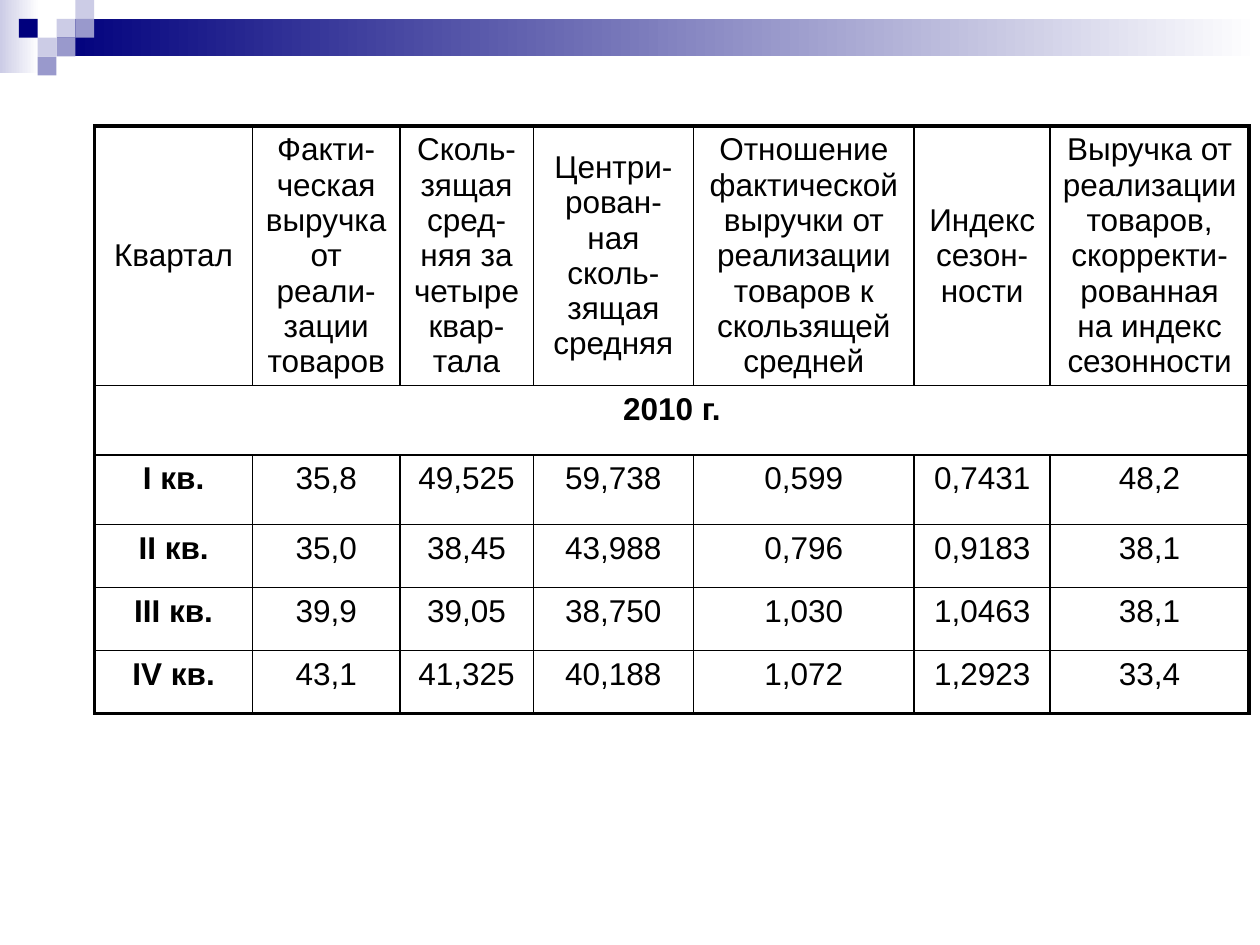
from dataclasses import dataclass

from lxml.etree import SubElement, fromstring
from pptx import Presentation
from pptx.dml.color import RGBColor as Rgb
from pptx.enum.shapes import MSO_SHAPE as Shape
from pptx.enum.text import MSO_ANCHOR as Anchor, PP_ALIGN as Align
from pptx.oxml.ns import nsdecls, qn
from pptx.util import Cm, Pt


@dataclass(frozen=True)
class Theme:
    navy: str = "00007D"
    lilac: str = "9999CC"
    pale: str = "CCCCE6"
    white: str = "FFFFFF"
    ink: str = "000000"
    font: str = "Arial"
    text_size: float = 18
    frame_width: float = 2.25
    rule_width: float = 1


@dataclass(frozen=True)
class Block:
    """A header rectangle in cm; fade_to turns the fill into a gradient."""
    left: float
    top: float
    width: float
    height: float
    color: str
    fade_to: str = ""


THEME = Theme()
SQUARE = 0.38

# Header decoration: two fading bars, then squares on a shared grid
BARS = [
    Block(0, 0, 0.79, 1.47, THEME.pale, THEME.white),
    Block(1.14, SQUARE, 24.26, 2 * SQUARE, THEME.navy, THEME.white),
]
SQUARES = [  # column, row, colour
    (3, 1, THEME.pale), (4, 0, THEME.pale), (4, 1, THEME.lilac),
    (2, 2, THEME.pale), (1, 1, THEME.navy), (3, 2, THEME.lilac),
    (2, 3, THEME.lilac),
]

# Table content
HEADINGS = [
    "Квартал",
    "Факти-ческая выручка от реали-зации товаров",
    "Сколь-зящая сред-няя за четыре квар-тала",
    "Центри-рован-ная сколь-зящая средняя",
    "Отношение фактической выручки от реализации товаров к скользящей средней",
    "Индекс сезон-ности",
    "Выручка от реализации товаров, скорректи-рованная на индекс сезонности",
]
YEAR = "2010 г."
QUARTERS = [
    ["I кв.", "35,8", "49,525", "59,738", "0,599", "0,7431", "48,2"],
    ["II кв.", "35,0", "38,45", "43,988", "0,796", "0,9183", "38,1"],
    ["III кв.", "39,9", "39,05", "38,750", "1,030", "1,0463", "38,1"],
    ["IV кв.", "43,1", "41,325", "40,188", "1,072", "1,2923", "33,4"],
]
COLUMN_WIDTHS = [3.18, 2.97, 2.69, 3.23, 4.45, 2.74, 4.01]
ROW_HEIGHTS = [5.23, 1.4, 1.4, 1.27, 1.27, 1.27]
TABLE_LEFT, TABLE_TOP = 1.91, 2.54
SIDE_MARGIN = 0.23


def draw_block(slide, block: Block) -> None:
    shape = slide.shapes.add_shape(
        Shape.RECTANGLE, Cm(block.left), Cm(block.top),
        Cm(block.width), Cm(block.height))
    shape.shadow.inherit = False
    shape.line.fill.background()
    if block.fade_to:
        shape.fill.gradient()
        shape.fill.gradient_angle = 0
        for stop, color in zip(shape.fill.gradient_stops,
                               (block.color, block.fade_to)):
            stop.color.rgb = Rgb.from_string(color)
    else:
        shape.fill.solid()
        shape.fill.fore_color.rgb = Rgb.from_string(block.color)


def set_borders(cell, left: bool, right: bool, top: bool, bottom: bool) -> None:
    """Draw all four edges; a true side lies on the outer frame."""
    properties = cell._tc.get_or_add_tcPr()
    sides = zip(("lnL", "lnR", "lnT", "lnB"), (left, right, top, bottom))
    for position, (tag, is_frame) in enumerate(sides):
        width = THEME.frame_width if is_frame else THEME.rule_width
        edge = fromstring(f'<a:{tag} {nsdecls("a")} w="{int(Pt(width))}"/>')
        fill = SubElement(edge, qn("a:solidFill"))
        SubElement(fill, qn("a:srgbClr"), val=THEME.ink)
        properties.insert(position, edge)


def write_cell(cell, text: str, bold: bool, anchor) -> None:
    cell.fill.background()
    cell.margin_left = cell.margin_right = Cm(SIDE_MARGIN)
    cell.vertical_anchor = anchor
    cell.text = text
    paragraph = cell.text_frame.paragraphs[0]
    paragraph.alignment = Align.CENTER
    paragraph.font.name = THEME.font
    paragraph.font.size = Pt(THEME.text_size)
    paragraph.font.bold = bold
    paragraph.font.color.rgb = Rgb.from_string(THEME.ink)


def draw_table(slide) -> None:
    rows = [HEADINGS, [YEAR], *QUARTERS]
    last_row, last_column = len(rows) - 1, len(HEADINGS) - 1
    table = slide.shapes.add_table(
        len(rows), len(HEADINGS), Cm(TABLE_LEFT), Cm(TABLE_TOP),
        Cm(sum(COLUMN_WIDTHS)), Cm(sum(ROW_HEIGHTS))).table
    table.first_row = table.horz_banding = False
    for column, width in zip(table.columns, COLUMN_WIDTHS):
        column.width = Cm(width)
    for row, height in zip(table.rows, ROW_HEIGHTS):
        row.height = Cm(height)

    # The year spans the full width
    table.cell(1, 0).merge(table.cell(1, last_column))
    for r, texts in enumerate(rows):
        for c, text in enumerate(texts):
            cell = table.cell(r, c)
            write_cell(cell, text, bold=r > 0 and c == 0,
                       anchor=Anchor.TOP if r else Anchor.MIDDLE)
            set_borders(cell, left=c == 0, right=c == last_column or r == 1,
                        top=r == 0, bottom=r == last_row)


def main() -> None:
    deck = Presentation()
    deck.slide_width, deck.slide_height = Cm(25.4), Cm(19.05)
    slide = deck.slides.add_slide(deck.slide_layouts[6])
    squares = [Block(column * SQUARE, row * SQUARE, SQUARE, SQUARE, color)
               for column, row, color in SQUARES]
    for block in BARS + squares:
        draw_block(slide, block)
    draw_table(slide)
    deck.save("out.pptx")


if __name__ == "__main__":
    main()
